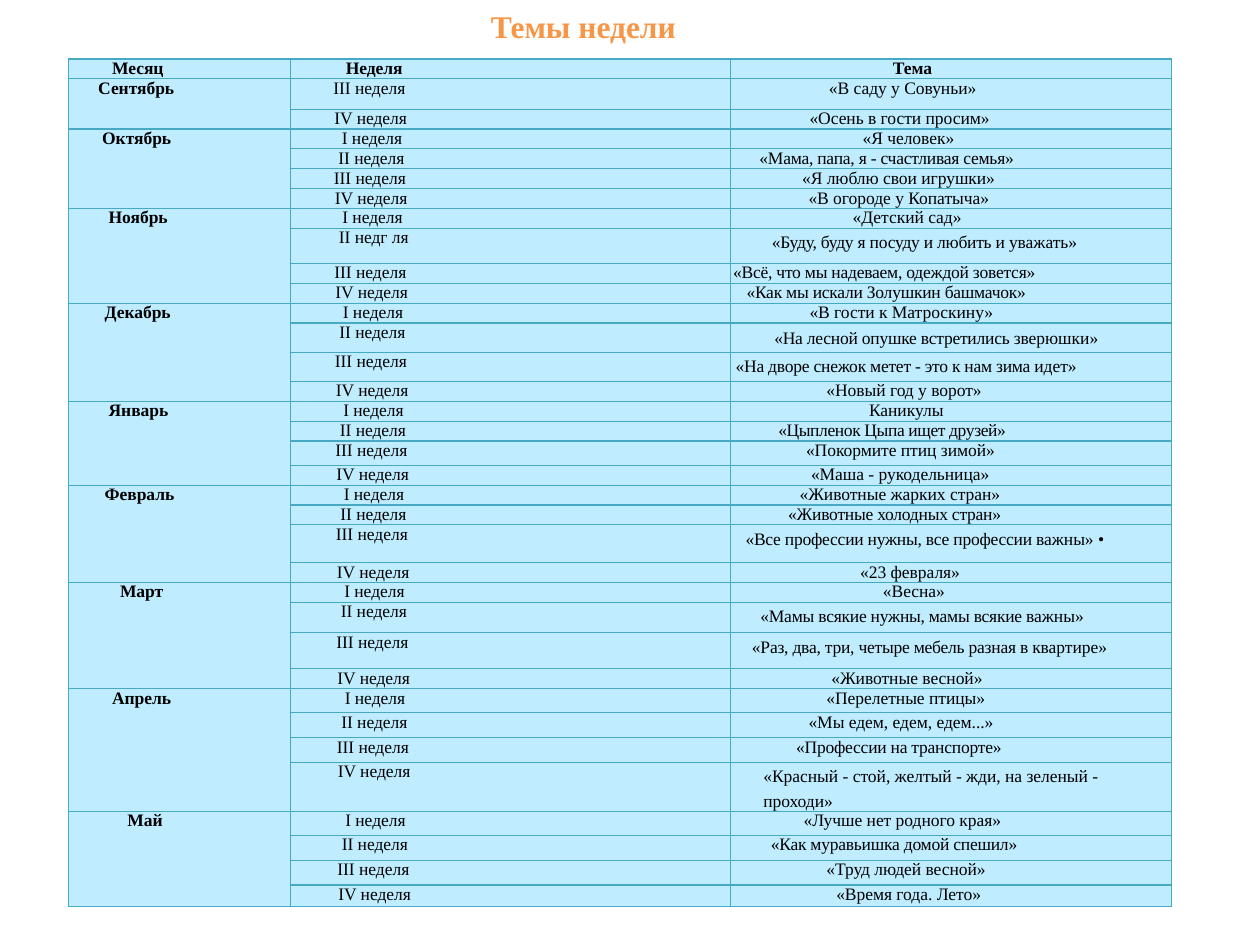
import pptx
import pptx.dml.color
import pptx.enum.text
import pptx.oxml
import pptx.oxml.ns
import pptx.util
from pptx.util import Cm

FONT = "Times New Roman"
BLACK, ORANGE, CELL_FILL, BORDER = "000000", "F79646", "BFECFF", "46AAC5"
LINE = 0.4  # height of a one-line row, cm
COLUMN_WIDTHS = [4.48, 8.87, 8.89]
HEADERS = [("Месяц", 0.86), ("Неделя", 1.09), ("Тема", 3.25)]

# Indent of each week label in the first month; it grows a little every month
WEEK_INDENTS = {"I": 1.0, "II": 0.93, "III": 0.84, "IV": 0.86}
INDENT_STEP = 0.01
WEEK_LABELS = {("Ноябрь", "II"): "II недг ля"}

# Month, indent, weeks: (number, row height, theme indent, theme parts,
# line spacing in points). A theme part is (text, letter spacing in points).
MONTHS = [
    ("Сентябрь", 0.58, [
        ("III", 0.61, 1.96, [("«В саду у Совуньи»", 0)], None),
        ("IV", LINE, 1.57, [("«Осень в гости просим»", 0)], None)]),
    ("Октябрь", 0.66, [
        ("I", LINE, 2.64, [("«Я человек»", 0)], None),
        ("II", LINE, 0.56, [("«Мама, папа, я - счастливая семья»", -0.1)], None),
        ("III", LINE, 1.42, [("«Я люблю свои игрушки»", 0)], None),
        ("IV", LINE, 1.55, [("«В огороде у Копатыча»", 0)], None)]),
    ("Ноябрь", 0.79, [
        ("I", LINE, 2.44, [("«Детский сад»", 0)], None),
        ("II", 0.71, 0.81, [("«Буду, буду я посуду и любить и ", -0.1), ("уважать»", 0)], 13.9),
        ("III", LINE, 0.03, [("«Всё, что мы надеваем, одеждой зовется»", -0.1)], None),
        ("IV", LINE, 0.3, [("«Как мы искали Золушкин башмачок»", -0.1)], None)]),
    ("Декабрь", 0.71, [
        ("I", LINE, 1.57, [("«В гости к Матроскину»", 0)], None),
        ("II", 0.59, 0.86, [("«На лесной опушке встретились ", -0.1), ("зверюшки»", 0)], 14.2),
        ("III", 0.59, 0.08, [("«На дворе снежок метет - это к нам зима ", -0.1), ("идет»", 0)], 13.7),
        ("IV", LINE, 1.91, [("«Новый год у ворот»", 0)], None)]),
    ("Январь", 0.79, [
        ("I", LINE, 2.77, [("Каникулы", 0)], None),
        ("II", LINE, 0.94, [("«Цыпленок Цыпа ищет друзей»", -0.2)], None),
        ("III", 0.49, 1.5, [("«Покормите птиц зимой»", 0)], None),
        ("IV", LINE, 1.6, [("«Маша - рукодельница»", 0)], None)]),
    ("Февраль", 0.71, [
        ("I", LINE, 1.37, [("«Животные жарких стран»", 0)], None),
        ("II", LINE, 1.14, [("«Животные холодных стран»", -0.1)], None),
        ("III", 0.76, 0.28, [("«Все профессии нужны, все профессии ", -0.1), ("важны» •", 0)], 13.7),
        ("IV", LINE, 2.59, [("«23 февраля»", 0)], None)]),
    ("Март", 1.02, [
        ("I", LINE, 3.05, [("«Весна»", 0)], None),
        ("II", 0.61, 0.58, [("«Мамы всякие нужны, мамы всякие ", -0.1), ("важны»", 0)], 13.7),
        ("III", 0.73, 0.41, [("«Раз, два, три, четыре мебель разная в ", -0.1), ("квартире»", 0)], 13.9),
        ("IV", LINE, 2.01, [("«Животные весной»", 0)], None)]),
    ("Апрель", 0.86, [
        ("I", 0.49, 1.91, [("«Перелетные птицы»", 0)], None),
        ("II", 0.5, 1.55, [("«Мы едем, едем, едем...»", 0)], None),
        ("III", 0.5, 1.3, [("«Профессии на транспорте»", -0.1)], None),
        ("IV", 0.76, 0.64, [("«Красный - стой, желтый - жди, на зеленый - проходи»", 0)], 13.9)]),
    ("Май", 1.17, [
        ("I", 0.49, 1.45, [("«Лучше нет родного края»", 0)], None),
        ("II", 0.5, 0.79, [("«Как муравьишка домой спешил»", -0.1)], None),
        ("III", 0.5, 1.91, [("«Труд людей весной»", 0)], None),
        ("IV", 0.43, 2.11, [("«Время года. Лето»", 0)], None)]),
]


def color(hex_value):
    return pptx.dml.color.RGBColor.from_string(hex_value)


def format_paragraph(paragraph, size, hex_value, bold, indent):
    """Set the font and the left indent of a paragraph."""
    for target in (paragraph, *paragraph.runs):
        target.font.name = FONT
        target.font.size = pptx.util.Pt(size)
        target.font.bold = bold
        target.font.color.rgb = color(hex_value)
    properties = paragraph._p.get_or_add_pPr()
    properties.set("marL", str(Cm(indent)))
    properties.set("indent", "0")


def style_cell(cell):
    """Give a cell its borders, fill and margins."""
    properties = cell._tc.get_or_add_tcPr()
    for side in ("lnL", "lnR", "lnT", "lnB"):
        properties.append(pptx.oxml.parse_xml(
            f'<a:{side} {pptx.oxml.ns.nsdecls("a")} w="{pptx.util.Pt(0.75)}">'
            f'<a:solidFill><a:srgbClr val="{BORDER}"/></a:solidFill></a:{side}>'))
    cell.fill.solid()
    cell.fill.fore_color.rgb = color(CELL_FILL)
    cell.margin_left = cell.margin_right = Cm(0.02)
    cell.margin_top = cell.margin_bottom = 0


def write_cell(cell, parts, indent, bold=False, line_spacing=None):
    paragraph = cell.text_frame.paragraphs[0]
    for text, letter_spacing in parts:
        run = paragraph.add_run()
        run.text = text
        if letter_spacing:
            run.font._element.set("spc", str(round(letter_spacing * 100)))
    if line_spacing:
        paragraph.line_spacing = pptx.util.Pt(line_spacing)
    format_paragraph(paragraph, 10, BLACK, bold, indent)


def add_title(slide):
    title = slide.shapes.title
    title.left, title.top, title.width, title.height = Cm(8.53), Cm(0), Cm(11.51), Cm(1.8)
    frame = title.text_frame
    frame.text = "Темы недели"
    frame.auto_size = pptx.enum.text.MSO_AUTO_SIZE.NONE
    frame.vertical_anchor = pptx.enum.text.MSO_ANCHOR.TOP
    frame.margin_top = Cm(0.15)
    paragraph = frame.paragraphs[0]
    paragraph.alignment = pptx.enum.text.PP_ALIGN.LEFT
    format_paragraph(paragraph, 18, ORANGE, True, 1.11)


def add_plan_table(slide):
    heights = [LINE] + [week[1] for month in MONTHS for week in month[2]]
    table = slide.shapes.add_table(
        len(heights), len(COLUMN_WIDTHS), Cm(1.38), Cm(1.19),
        Cm(sum(COLUMN_WIDTHS)), Cm(sum(heights))).table
    for column, width in zip(table.columns, COLUMN_WIDTHS):
        column.width = Cm(width)
    for row, height in zip(table.rows, heights):
        row.height = Cm(height)
    for cell in table.iter_cells():
        style_cell(cell)

    # Header row
    for column_index, (text, indent) in enumerate(HEADERS):
        write_cell(table.cell(0, column_index), [(text, 0)], indent, bold=True)

    # One block of rows per month
    row_index = 1
    for month_index, (month, month_indent, weeks) in enumerate(MONTHS):
        month_cell = table.cell(row_index, 0)
        month_cell.merge(table.cell(row_index + len(weeks) - 1, 0))
        write_cell(month_cell, [(month, 0)], month_indent, bold=True)
        for number, _, theme_indent, theme, line_spacing in weeks:
            label = WEEK_LABELS.get((month, number), f"{number} неделя")
            week_indent = WEEK_INDENTS[number] + INDENT_STEP * month_index
            write_cell(table.cell(row_index, 1), [(label, 0)], week_indent)
            write_cell(table.cell(row_index, 2), theme, theme_indent,
                       line_spacing=line_spacing)
            row_index += 1

    # Covered cells keep the small font so that they do not stretch their rows
    for cell in table.iter_cells():
        if cell.is_spanned:
            format_paragraph(cell.text_frame.paragraphs[0], 10, BLACK, False, 0)


def main():
    presentation = pptx.Presentation()
    presentation.slide_width, presentation.slide_height = Cm(25.4), Cm(19.05)
    slide = presentation.slides.add_slide(presentation.slide_layouts[5])
    add_plan_table(slide)
    add_title(slide)
    presentation.save("out.pptx")


if __name__ == "__main__":
    main()
